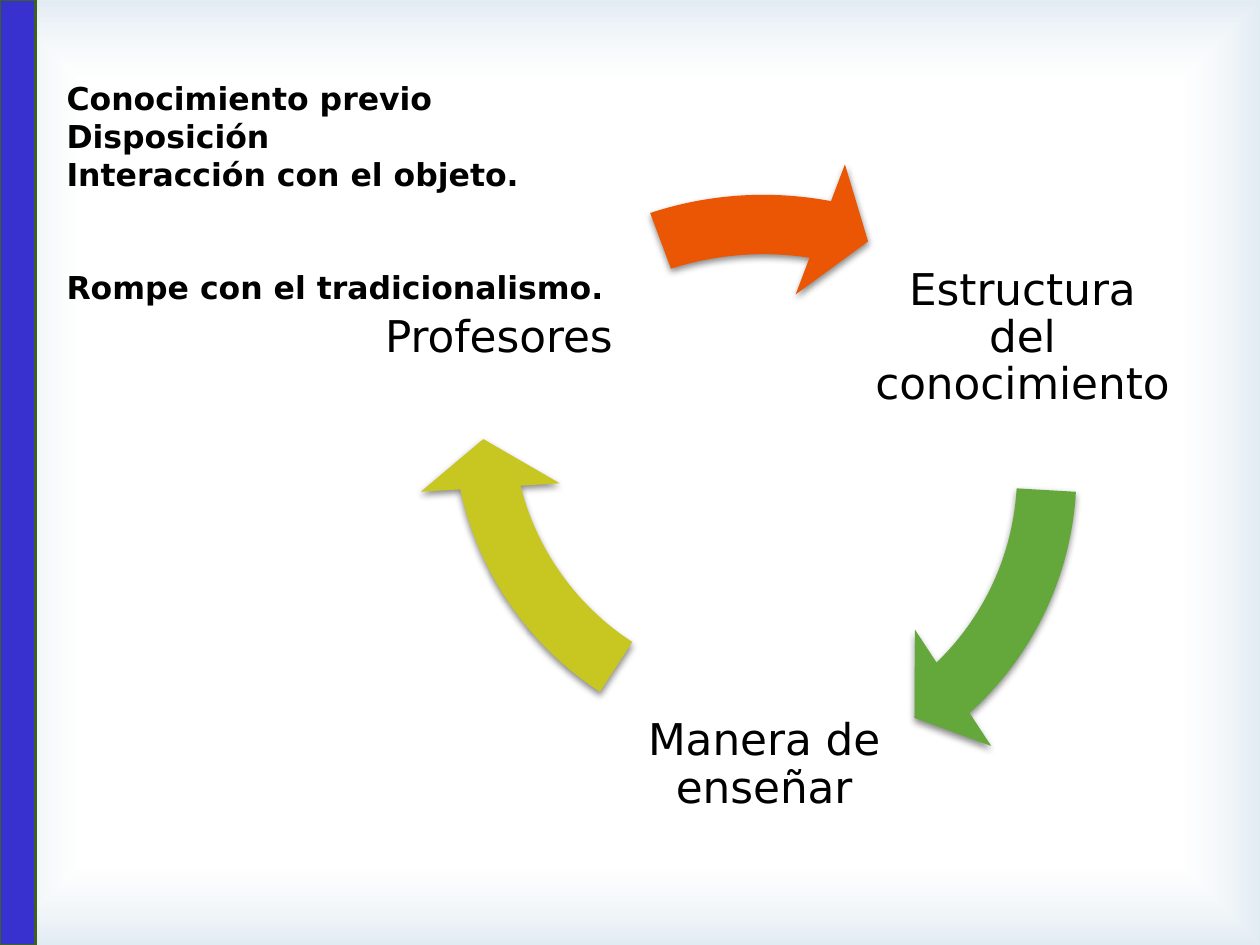
from lxml import etree
from pptx import Presentation
from pptx.dml.color import RGBColor
from pptx.enum.shapes import MSO_SHAPE
from pptx.enum.text import MSO_ANCHOR, PP_ALIGN
from pptx.oxml import parse_xml
from pptx.oxml.ns import nsdecls, qn
from pptx.util import Inches, Pt

FONT = "DejaVu Sans"
BLACK = RGBColor(0x00, 0x00, 0x00)
WHITE = RGBColor(0xFF, 0xFF, 0xFF)
PALE_BLUE = RGBColor(0x7E, 0xA9, 0xCA)
BAND_BLUE = RGBColor(0x39, 0x31, 0xCF)
BAND_EDGE = RGBColor(0x3B, 0x62, 0x23)
GREEN = RGBColor(0x64, 0xA7, 0x3B)
YELLOW = RGBColor(0xC8, 0xC6, 0x21)
ORANGE = RGBColor(0xEB, 0x56, 0x05)

# text, left, top
LABELS = [
    ("Estructura del conocimiento", 6.9, 1.47),
    ("Manera de enseñar", 4.85, 4.86),
    ("Profesores ", 2.8, 1.47),
]
# box, end angle, start angle (adjustment units), colour
ARROWS = [
    ((3.11, 0.88, 5.75, 5.75), 28.303, 1.993, GREEN),
    ((3.28, 0.47, 5.75, 5.75), 100.173, 73.799, YELLOW),
    ((3.03, 1.23, 6.06, 5.75), 168.702, 149.747, ORANGE),
]
NOTES = [
    "Conocimiento previo",
    "Disposición",
    "Interacción con el objeto.",
    "Rompe con el tradicionalismo.",
]


def add_plain_shape(slide, kind, box):
    sp = slide.shapes.add_shape(kind, *map(Inches, box))
    sp.shadow.inherit = False
    sp.line.fill.background()
    return sp


def add_text_frame(slide, box):
    tf = slide.shapes.add_textbox(*map(Inches, box)).text_frame
    tf.word_wrap = True
    return tf


def set_font(p, size, bold=False):
    p.font.name = FONT
    p.font.size = Pt(size)
    p.font.bold = bold
    p.font.color.rgb = BLACK


def add_glow(slide, box):
    """Pale gradient that darkens towards the edges of the box."""
    sp = add_plain_shape(slide, MSO_SHAPE.RECTANGLE, box)
    stops = "".join(
        f'<a:gs pos="{pos}000"><a:srgbClr val="{color}">'
        f'<a:alpha val="{alpha}000"/></a:srgbClr></a:gs>'
        for pos, color, alpha in [(83, WHITE, 11), (100, PALE_BLUE, 23)])
    grad = parse_xml(
        f'<a:gradFill {nsdecls("a")} rotWithShape="1"><a:gsLst>{stops}</a:gsLst>'
        '<a:path path="rect"><a:fillToRect l="50000" t="50000" r="50000" b="50000"/>'
        '</a:path></a:gradFill>')
    sp._element.spPr.find(qn("a:prstGeom")).addnext(grad)


def add_side_band(slide, box):
    sp = add_plain_shape(slide, MSO_SHAPE.RECTANGLE, box)
    sp.fill.solid()
    sp.fill.fore_color.rgb = BAND_BLUE
    sp.line.color.rgb = BAND_EDGE
    sp.line.width = Pt(1.5)


def add_label(slide, text, box):
    tf = add_text_frame(slide, box)
    tf.vertical_anchor = MSO_ANCHOR.MIDDLE
    tf.margin_left = tf.margin_right = Inches(0.03)
    tf.margin_top = tf.margin_bottom = Inches(0.03)
    p = tf.paragraphs[0]
    p.text = text
    p.alignment = PP_ALIGN.CENTER
    p.line_spacing = 0.9
    set_font(p, 25)


def add_cycle_arrow(slide, box, end, start, color):
    sp = add_plain_shape(slide, MSO_SHAPE.CIRCULAR_ARROW, box)
    for i, value in enumerate([0.082, 5.757, end, start, 0.096]):
        sp.adjustments[i] = value
    sp.fill.solid()
    sp.fill.fore_color.rgb = color
    effects = sp._element.spPr.find(qn("a:effectLst"))
    shadow = etree.SubElement(effects, qn("a:outerShdw"), blurRad=str(Pt(4)),
                              dist=str(Pt(2)), dir="5400000", rotWithShape="0")
    tint = etree.SubElement(shadow, qn("a:srgbClr"), val=str(BLACK))
    etree.SubElement(tint, qn("a:alpha"), val="46000")


def add_cycle(slide):
    for (text, left, top), arrow in zip(LABELS, ARROWS):
        add_label(slide, text, (left, top, 2.43, 2.43))
        add_cycle_arrow(slide, *arrow)


def add_notes_text(slide, box):
    tf = add_text_frame(slide, box)
    tf.margin_top = Inches(0.65)
    for i, text in enumerate(NOTES):
        p = tf.paragraphs[0] if i == 0 else tf.add_paragraph()
        p.text = text
        set_font(p, 18, bold=True)
    p.space_before = Pt(43)


def main():
    prs = Presentation()
    prs.slide_width, prs.slide_height = Inches(10), Inches(7.5)
    slide = prs.slides.add_slide(prs.slide_layouts[6])
    slide.background.fill.solid()
    slide.background.fill.fore_color.rgb = WHITE
    add_glow(slide, (0, 0, 10, 7.5))
    add_side_band(slide, (0, 0, 0.28, 7.5))
    add_cycle(slide)
    add_notes_text(slide, (0.43, -0.02, 5, 3.74))
    prs.save("out.pptx")


if __name__ == "__main__":
    main()
